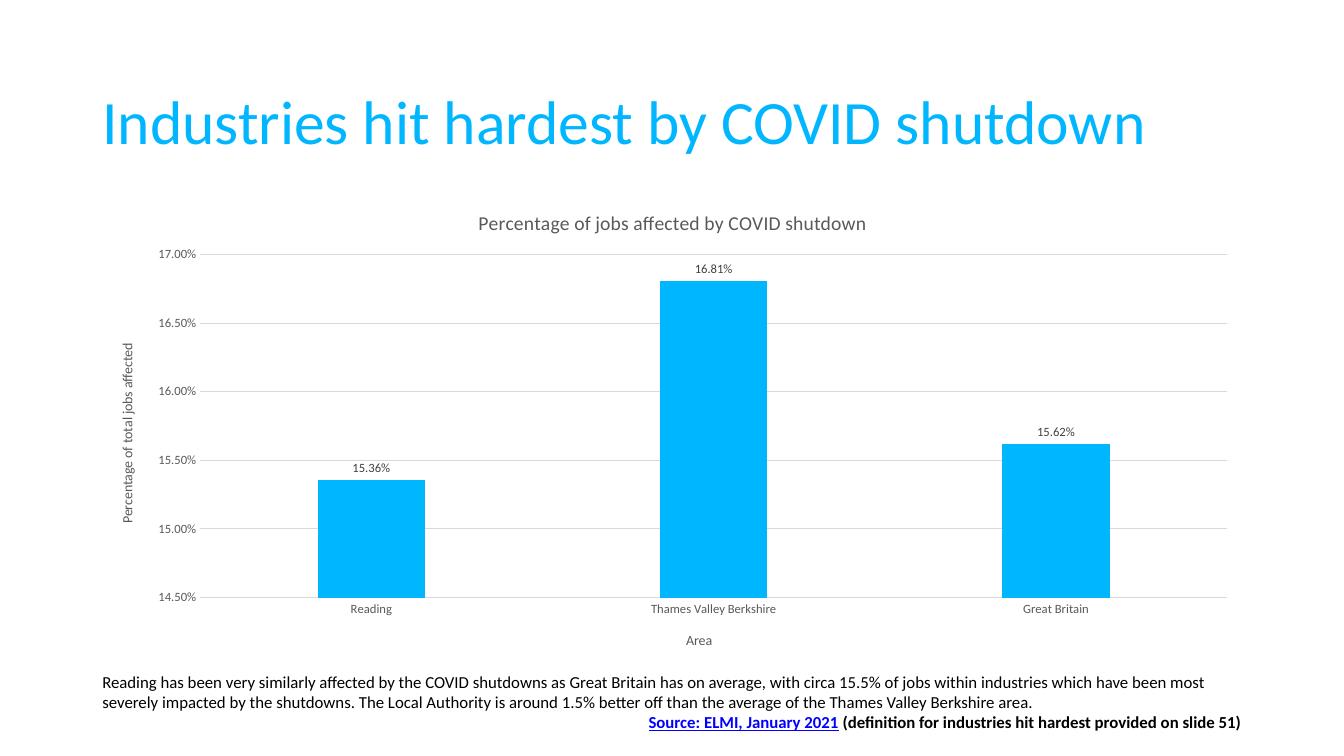
from pptx import Presentation
from pptx.chart.data import CategoryChartData
from pptx.dml.color import RGBColor
from pptx.enum.chart import XL_CHART_TYPE, XL_LABEL_POSITION, XL_TICK_MARK
from pptx.enum.text import MSO_ANCHOR, PP_ALIGN
from pptx.oxml import parse_xml
from pptx.oxml.ns import nsdecls, qn
from pptx.util import Pt

PX = 9525
FONT = "Calibri"
HEX = {"sky": "00B7FF", "ink": "000000", "link": "0000FF",
       "grey": "595959", "dark": "404040", "grid": "D9D9D9"}
LEFT, WIDE = 88, 1104
BODY = ("Reading has been very similarly affected by the COVID shutdowns as Great Britain "
        "has on average, with circa 15.5% of jobs within industries which have been most "
        "severely impacted by the shutdowns. The Local Authority is around 1.5% better off "
        "than the average of the Thames Valley Berkshire area.")


def color(name):
    """Return the named colour."""
    return RGBColor.from_string(HEX[name])


def style(font, size, tint, bold=False, line=False):
    """Set the look of a font."""
    font.name, font.size = FONT, Pt(size)
    font.bold, font.underline = bold, line
    font.color.rgb = color(tint)


def write(para, text, size=12, tint="ink", bold=False, line=False):
    """Add a formatted run to a paragraph."""
    run = para.add_run()
    run.text = text
    style(run.font, size, tint, bold, line)


def add_box(slide, top, high, anchor=MSO_ANCHOR.TOP):
    """Add a wrapping text box and return its frame."""
    box = slide.shapes.add_textbox(LEFT * PX, top * PX, WIDE * PX, high * PX)
    frame = box.text_frame
    frame.word_wrap = True
    frame.vertical_anchor = anchor
    return frame


def place(node, index, **spots):
    """Give a chart part a manual layout."""
    for old in node.findall(qn("c:layout")):
        node.remove(old)
    inner = '<c:layoutTarget val="inner"/>' if "w" in spots else ""
    modes = "".join(f'<c:{key}Mode val="edge"/>' for key in "xy")
    sizes = "".join(f'<c:{key} val="{val}"/>' for key, val in spots.items())
    node.insert(index, parse_xml(
        f'<c:layout {nsdecls("c")}><c:manualLayout>{inner}{modes}{sizes}'
        '</c:manualLayout></c:layout>'))


def add_title(title, text, size, x, y, turn=0):
    """Write and place a title of the chart or an axis."""
    frame = title.text_frame
    write(frame.paragraphs[0], text, size, "grey")
    title._element.find(".//" + qn("a:bodyPr")).set("rot", str(turn * 60000))
    place(title._element, 1, x=x, y=y)


def set_axis(axis):
    """Give an axis its font and hide its ticks."""
    axis.major_tick_mark = axis.minor_tick_mark = XL_TICK_MARK.NONE
    style(axis.tick_labels.font, 9, "grey")


def set_line(line):
    """Draw a thin grid-coloured line."""
    line.color.rgb = color("grid")
    line.width = Pt(0.75)


def add_bars(slide):
    """Add the column chart of affected jobs."""
    data = CategoryChartData(number_format="0.00%")
    data.categories = ["Reading", "Thames Valley Berkshire", "Great Britain"]
    data.add_series("Series 1", [0.1536, 0.1681, 0.1562])
    chart = slide.shapes.add_chart(XL_CHART_TYPE.COLUMN_CLUSTERED, LEFT * PX, 178 * PX,
                                   WIDE * PX, 457 * PX, data).chart
    style(chart.font, 10, "ink")
    chart.has_legend = False
    add_title(chart.chart_title, "Percentage of jobs affected by COVID shutdown", 14, 0.33, 0.04)
    cat, val = chart.category_axis, chart.value_axis
    set_axis(cat)
    set_line(cat.format.line)
    add_title(cat.axis_title, "Area", 10, 0.51, 0.92)
    set_axis(val)
    val.minimum_scale, val.maximum_scale, val.major_unit = 0.145, 0.17, 0.005
    val.tick_labels.number_format = "0.00%"
    val.tick_labels.number_format_is_linked = False
    val.format.line.fill.background()
    set_line(val.major_gridlines.format.line)
    add_title(val.axis_title, "Percentage of total jobs affected", 10, 0.02, 0.32, -90)
    plot = chart.plots[0]
    plot.gap_width, plot.overlap, plot.vary_by_categories = 219, -27, False
    fill = plot.series[0].format.fill
    fill.solid()
    fill.fore_color.rgb = color("sky")
    plot.has_data_labels = True
    tags = plot.data_labels
    tags.show_value = True
    tags.position = XL_LABEL_POSITION.OUTSIDE_END
    tags.number_format, tags.number_format_is_linked = "0.00%", False
    style(tags.font, 9, "dark")
    area = chart._chartSpace.find(".//" + qn("c:plotArea"))
    place(area, 0, x=0.093, y=0.141, w=0.886, h=0.715)


def main():
    """Build the slide and save it."""
    deck = Presentation()
    deck.slide_width, deck.slide_height = 1280 * PX, 720 * PX
    slide = deck.slides.add_slide(deck.slide_layouts[6])
    head = add_box(slide, 59, 119, MSO_ANCHOR.MIDDLE).paragraphs[0]
    head.line_spacing = 0.9
    write(head, "Industries hit hardest by COVID shutdown", 44, "sky")
    add_bars(slide)
    note = add_box(slide, 635, 68)
    write(note.paragraphs[0], BODY)
    source = note.add_paragraph()
    source.alignment = PP_ALIGN.RIGHT
    write(source, "Source: ELMI, January 2021", tint="link", bold=True, line=True)
    write(source, " (definition for industries hit hardest provided on slide 51)", bold=True)
    deck.save("out.pptx")


if __name__ == "__main__":
    main()
